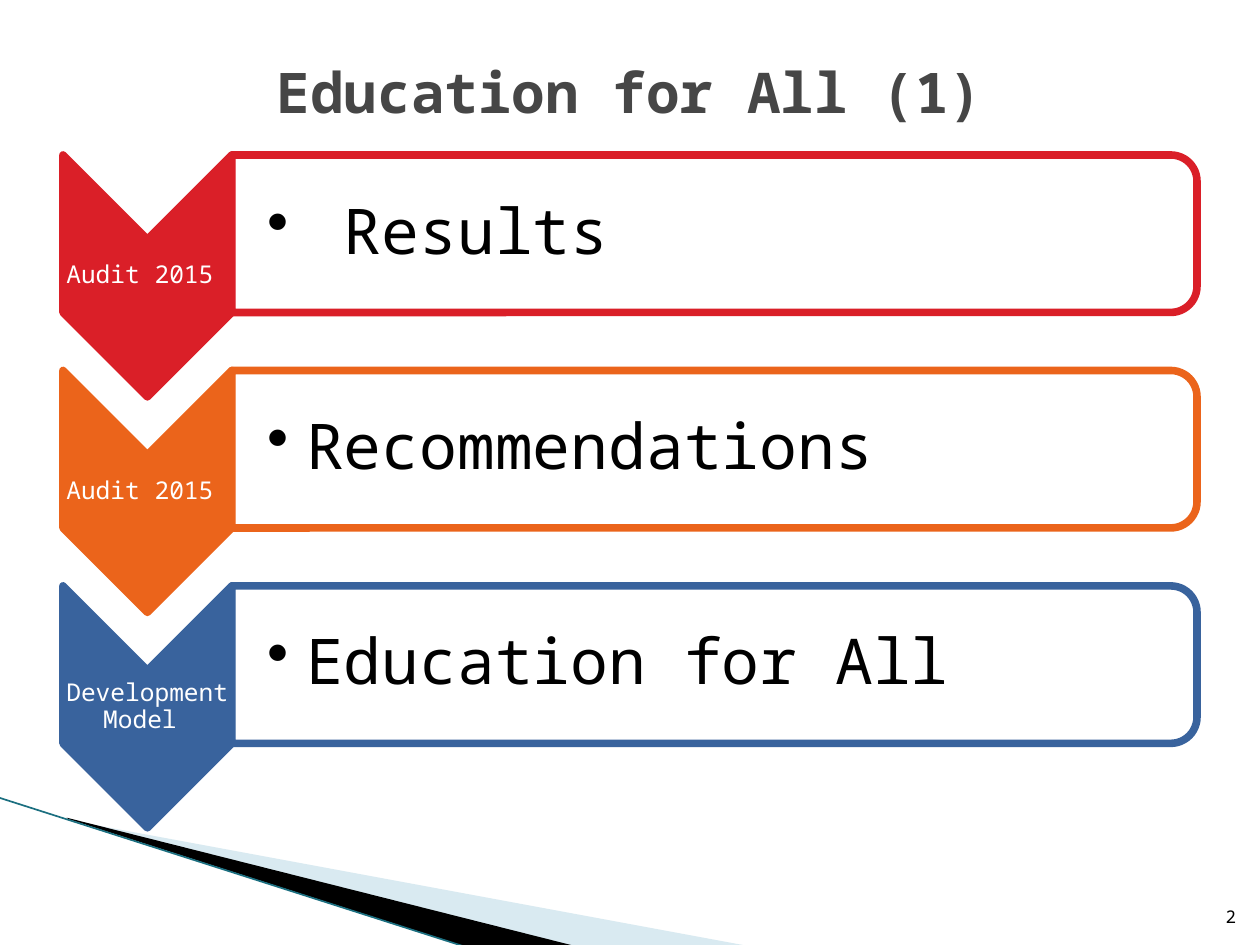
from lxml import etree
from pptx import Presentation
from pptx.dml.color import RGBColor
from pptx.enum.shapes import MSO_CONNECTOR, MSO_SHAPE
from pptx.enum.text import MSO_ANCHOR, PP_ALIGN
from pptx.oxml.ns import qn
from pptx.util import Inches, Pt

CHEVRON = MSO_SHAPE.CHEVRON
ROUND_TOP = MSO_SHAPE.ROUND_2_SAME_RECTANGLE
STRAIGHT = MSO_CONNECTOR.STRAIGHT
MIDDLE, BOTTOM = MSO_ANCHOR.MIDDLE, MSO_ANCHOR.BOTTOM
LEFT, CENTER, RIGHT = PP_ALIGN.LEFT, PP_ALIGN.CENTER, PP_ALIGN.RIGHT

FONT = "Noto Sans Mono"
WHITE = RGBColor(0xFF, 0xFF, 0xFF)
BLACK = RGBColor(0, 0, 0)
TITLE_GRAY = RGBColor(0x46, 0x46, 0x46)
PALE_BLUE = RGBColor(0xA0, 0xCB, 0xDC)
TEAL = RGBColor(0x1B, 0x6F, 0x80)
RED = RGBColor(0xDA, 0x1F, 0x28)
ORANGE = RGBColor(0xEB, 0x64, 0x1B)
BLUE = RGBColor(0x39, 0x63, 0x9D)

BULLET_INDENT = 0.31
# stage label, content, colour, hanging indent of the content
STAGES = [
    ("Audit 2015 ", "Results", RED, 0.61),
    ("Audit 2015 ", "Recommendations", ORANGE, BULLET_INDENT),
    ("Development Model ", "Education for All", BLUE, BULLET_INDENT),
]
FIRST_TOP = 1.23
STAGE_PITCH = 1.71


def set_fill(shape, color, opacity=100):
    shape.fill.solid()
    shape.fill.fore_color.rgb = color
    if opacity < 100:
        color_node = shape.fill._xPr.find(qn("a:solidFill"))[0]
        etree.SubElement(color_node, qn("a:alpha"), val=str(opacity * 1000))


def add_wedge(slide, points, color, opacity=100):
    corners = [(Inches(x), Inches(y)) for x, y in points]
    builder = slide.shapes.build_freeform(*corners[0])
    builder.add_line_segments(corners[1:], close=True)
    wedge = builder.convert_to_shape()
    set_fill(wedge, color, opacity)
    wedge.line.fill.background()
    wedge.shadow.inherit = False


def add_corner_decoration(slide):
    add_wedge(slide, [(0.55, 6.51), (5.95, 7.51), (4.56, 7.51), (0.55, 6.5)],
              PALE_BLUE, 40)
    add_wedge(slide, [(0.53, 6.49), (4.57, 7.51), (3.72, 7.52), (0.54, 6.5)],
              BLACK)
    edge = slide.shapes.add_connector(STRAIGHT, Inches(-0.01), Inches(6.33),
                                      Inches(3.71), Inches(7.52))
    edge.line.color.rgb = TEAL
    edge.line.width = Pt(0.95)
    etree.SubElement(edge._element.spPr, qn("a:effectLst"))


def add_turned_shape(slide, kind, left, top, width, height, outline,
                     fill, opacity=100):
    """Add a shape turned 90 degrees that covers the given upright area."""
    shape = slide.shapes.add_shape(
        kind, Inches(left + (width - height) / 2),
        Inches(top + (height - width) / 2), Inches(height), Inches(width))
    shape.rotation = 90
    shape.shadow.inherit = False
    set_fill(shape, fill, opacity)
    shape.line.color.rgb = outline
    shape.line.width = Pt(4.33)


def add_text(slide, text, left, top, width, height, size, color, align,
             anchor=MIDDLE, margin=0.05, left_margin=None, spacing=None,
             bullet_indent=None, bold=False):
    box = slide.shapes.add_textbox(Inches(left), Inches(top),
                                   Inches(width), Inches(height))
    frame = box.text_frame
    frame.word_wrap = True
    frame.vertical_anchor = anchor
    frame.margin_top = frame.margin_bottom = frame.margin_right = Inches(margin)
    frame.margin_left = Inches(margin if left_margin is None else left_margin)
    paragraph = frame.paragraphs[0]
    paragraph.text = text
    paragraph.alignment = align
    if spacing:
        paragraph.line_spacing = spacing
    if bullet_indent:
        properties = paragraph._p.get_or_add_pPr()
        properties.set("marL", str(Inches(bullet_indent)))
        properties.set("indent", str(-Inches(bullet_indent)))
        etree.SubElement(properties, qn("a:buChar"), char="•")
    font = paragraph.font
    font.name = FONT
    font.size = Pt(size)
    font.bold = bold
    font.color.rgb = color


def add_stage(slide, top, label, content, color, indent):
    add_turned_shape(slide, CHEVRON, 0.5, top, 1.34, 1.92, color, color)
    add_text(slide, label, 0.5, top + 0.67, 1.34, 0.58, 14, WHITE, CENTER,
             margin=0.01, spacing=0.9)
    add_turned_shape(slide, ROUND_TOP, 1.84, top, 7.66, 1.25, color, WHITE, 90)
    add_text(slide, content, 1.84, top + 0.06, 7.6, 1.13, 36, BLACK, LEFT,
             margin=0.03, left_margin=0.28, spacing=0.9, bullet_indent=indent)


def main():
    deck = Presentation()
    deck.slide_width, deck.slide_height = Inches(10), Inches(7.5)
    slide = deck.slides.add_slide(deck.slide_layouts[6])
    add_corner_decoration(slide)
    for row, stage in enumerate(STAGES):
        add_stage(slide, FIRST_TOP + row * STAGE_PITCH, *stage)
    add_text(slide, "2", 9.46, 7.01, 0.4, 0.4, 10, BLACK, RIGHT, anchor=BOTTOM)
    add_text(slide, "Education for All (1)", 0.5, 0.3, 9, 0.85, 32,
             TITLE_GRAY, CENTER, bold=True)
    deck.save("out.pptx")


if __name__ == "__main__":
    main()
